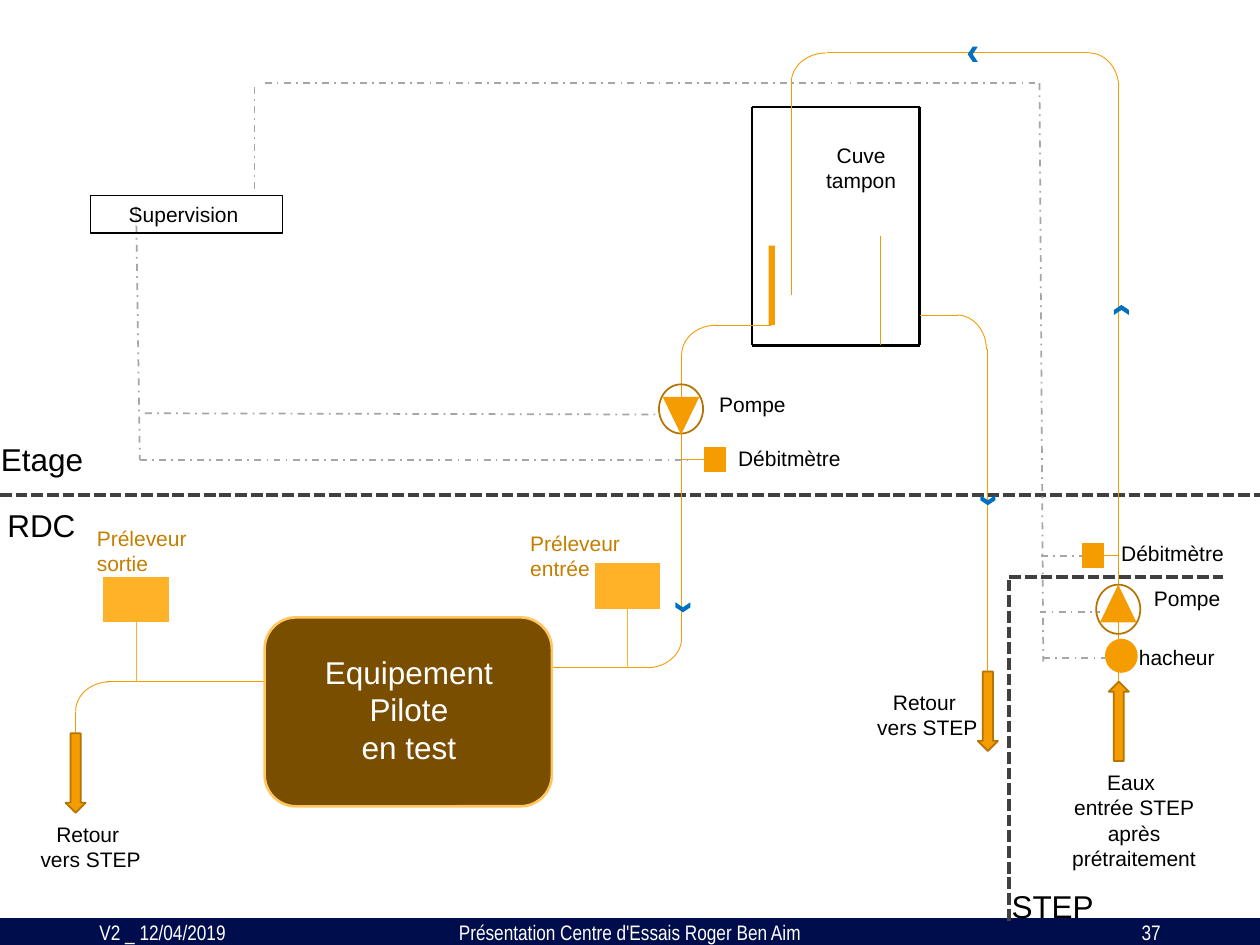
from lxml import etree
from pptx import Presentation
from pptx.dml.color import RGBColor
from pptx.enum.dml import MSO_LINE
from pptx.enum.shapes import MSO_CONNECTOR, MSO_SHAPE
from pptx.enum.text import MSO_ANCHOR, PP_ALIGN
from pptx.oxml.ns import qn
from pptx.util import Inches, Pt

LEFT, CENTER, RIGHT = PP_ALIGN.LEFT, PP_ALIGN.CENTER, PP_ALIGN.RIGHT
TOP, MIDDLE = MSO_ANCHOR.TOP, MSO_ANCHOR.MIDDLE
DASH, DASH_DOT = MSO_LINE.SQUARE_DOT, MSO_LINE.DASH_DOT
STRAIGHT = MSO_CONNECTOR.STRAIGHT
RECTANGLE, ROUNDED = MSO_SHAPE.RECTANGLE, MSO_SHAPE.ROUNDED_RECTANGLE
PROCESS, RING = MSO_SHAPE.FLOWCHART_PROCESS, MSO_SHAPE.FLOWCHART_CONNECTOR
ARC, ARROW, CHEVRON = MSO_SHAPE.ARC, MSO_SHAPE.UP_ARROW, MSO_SHAPE.CHEVRON
TRIANGLE, OVAL = MSO_SHAPE.ISOSCELES_TRIANGLE, MSO_SHAPE.OVAL

ORANGE, DARK_ORANGE, LIGHT_ORANGE = "F59C00", "B57300", "FFB227"
OCHRE, BROWN, PEACH = "C47E00", "7A4E00", "FFC560"
NAVY, BLUE, GREY, DARK_GREY = "000D4C", "0070C0", "A6A6A6", "404040"
BLACK, WHITE = "000000", "FFFFFF"

presentation = Presentation()
presentation.slide_width, presentation.slide_height = Inches(10), Inches(7.5)
slide = presentation.slides.add_slide(presentation.slide_layouts[6])


def add_line(x1, y1, x2, y2, color=ORANGE, width=0.5, dash=None):
    connector = slide.shapes.add_connector(
        STRAIGHT, Inches(x1), Inches(y1), Inches(x2), Inches(y2))
    connector.line.color.rgb = RGBColor.from_string(color)
    connector.line.width = Pt(width)
    if dash:
        connector.line.dash_style = dash
    etree.SubElement(connector._element.spPr, qn("a:effectLst"))
    return connector


def add_figure(kind, left, top, width, height, fill=None, line=None,
               line_width=1, rotation=0):
    shape = slide.shapes.add_shape(
        kind, Inches(left), Inches(top), Inches(width), Inches(height))
    shape.shadow.inherit = False
    shape.rotation = rotation
    if fill:
        shape.fill.solid()
        shape.fill.fore_color.rgb = RGBColor.from_string(fill)
    else:
        shape.fill.background()
    if line:
        shape.line.color.rgb = RGBColor.from_string(line)
        shape.line.width = Pt(line_width)
    else:
        shape.line.fill.background()
    return shape


add_figure(RECTANGLE, 0, 7.29, 10, 0.21, NAVY, NAVY)

add_line(0, 3.93, 10, 3.93, DARK_GREY, 2.25, DASH)

tank_corners = [(5.97, 0.85), (7.3, 0.85), (7.3, 2.74), (5.97, 2.74)]
for start, end in zip(tank_corners, tank_corners[1:] + tank_corners[:1]):
    add_line(*start, *end, BLACK, 1.5)

pipes = [
    (8.88, 6.04, 8.88, 0.69), (6.56, 0.42, 8.64, 0.42),
    (6.28, 0.65, 6.28, 2.34), (6.99, 1.87, 6.99, 2.74),
    (7.3, 2.5, 7.6, 2.5), (7.84, 2.77, 7.84, 5.81),
    (6.12, 2.11, 6.12, 2.58), (6.12, 2.58, 5.65, 2.58),
    (5.41, 2.81, 5.41, 5.07), (4.38, 5.3, 5.18, 5.3),
    (2.1, 5.41, 0.85, 5.41), (0.6, 5.65, 0.6, 6.44),
]
for pipe in pipes:
    add_line(*pipe)

bends = [(8.41, 0.42, 0), (6.32, 0.38, 270), (7.36, 2.5, 0),
         (5.45, 2.54, 270), (4.9, 4.79, 90), (0.64, 5.37, 270)]
for left, top, rotation in bends:
    add_figure(ARC, left, top, 0.47, 0.55, line=ORANGE, line_width=0.5,
               rotation=rotation)

for left, top, rotation in [(8.8, 5.41, 0), (7.76, 5.33, 180), (0.52, 5.82, 180)]:
    add_figure(ARROW, left, top, 0.16, 0.63, ORANGE, DARK_ORANGE, 1, rotation)

add_figure(ROUNDED, 2.1, 4.9, 2.28, 1.5, BROWN, PEACH, 1.5)

flow_marks = [(8.86, 2.4, 270), (7.68, 0.37, 180), (7.8, 3.91, 90), (5.38, 4.76, 90)]
for left, top, rotation in flow_marks:
    add_figure(CHEVRON, left, top, 0.08, 0.12, BLUE, rotation=rotation)

add_figure(RECTANGLE, 6.1, 1.95, 0.05, 0.63, ORANGE)

for left, top, pipe_y in [(4.72, 4.47, 5.3), (0.82, 4.58, 5.41)]:
    sampler = add_figure(PROCESS, left, top, 0.52, 0.36, LIGHT_ORANGE)
    middle = left + 0.26
    add_line(middle, top + 0.36, middle, pipe_y, LIGHT_ORANGE).begin_connect(sampler, 2)

for left, top, triangle_top, rotation in [(5.23, 3.05, 3.15, 180), (8.7, 4.64, 4.64, 0)]:
    add_figure(RING, left, top, 0.35, 0.39, line=DARK_ORANGE, rotation=rotation)
    add_figure(TRIANGLE, left + 0.03, triangle_top, 0.29, 0.3, ORANGE, rotation=rotation)

add_figure(OVAL, 8.77, 5.07, 0.26, 0.27, ORANGE)

floor_meter = add_figure(PROCESS, 5.59, 3.55, 0.17, 0.2, ORANGE)
add_line(5.41, 3.65, 5.59, 3.65).end_connect(floor_meter, 1)
inlet_meter = add_figure(PROCESS, 8.59, 4.31, 0.17, 0.2, ORANGE)
add_line(8.76, 4.41, 8.88, 4.41).begin_connect(inlet_meter, 3)
add_line(8.26, 4.41, 8.59, 4.41, GREY, 1, DASH_DOT).end_connect(inlet_meter, 1)

signals = [
    (8.25, 4.86, 8.73, 4.86), (1.11, 3.65, 5.46, 3.65),
    (1.15, 3.28, 5.2, 3.29), (1.08, 1.64, 1.11, 3.65),
    (8.28, 5.22, 8.77, 5.22), (8.25, 0.66, 8.28, 5.25),
    (2.1, 0.66, 8.25, 0.66), (2.02, 0.69, 2.02, 1.55),
]
for signal in signals:
    add_line(*signal, GREY, 1, DASH_DOT)

add_line(8.01, 4.58, 9.71, 4.58, DARK_GREY, 2.25, DASH)
add_line(8.01, 4.6, 8.01, 7.31, DARK_GREY, 2.25, DASH)

add_figure(RECTANGLE, 0.72, 1.55, 1.52, 0.3, line=BLACK, line_width=0.75)

floor_style = (LEFT, 18, BLACK, "Arial", TOP)
label_style = (LEFT, 12, BLACK, "Arial", TOP)
centered_style = (CENTER, 12, BLACK, "Arial", TOP)
sampler_style = (LEFT, 12, OCHRE, "Arial", TOP)
pilot_style = (CENTER, 18, WHITE, "Arial", TOP)
footer_styles = [(align, 12, WHITE, "Arial Narrow", MIDDLE)
                 for align in (LEFT, CENTER, RIGHT)]
labels = [
    (-0.09, 3.44, 0.94, 0.4, ["Etage"], floor_style),
    (-0.04, 3.97, 1.5, 0.4, ["RDC"], floor_style),
    (7.93, 6.99, 1.5, 0.4, ["STEP"], floor_style),
    (8.34, 6.06, 1.32, 0.91, ["Eaux ", "entrée STEP après prétraitement"], centered_style),
    (6.69, 5.42, 1.34, 0.5, ["Retour ", "vers STEP"], centered_style),
    (0.05, 6.47, 1.34, 0.5, ["Retour ", "vers STEP"], centered_style),
    (0.72, 1.55, 1.52, 0.3, ["Supervision "], centered_style),
    (6.4, 1.08, 0.87, 0.5, ["Cuve tampon"], centered_style),
    (0.67, 4.12, 1.35, 0.3, ["Préleveur sortie"], sampler_style),
    (4.11, 4.16, 1.35, 0.3, ["Préleveur entrée"], sampler_style),
    (5.61, 3.06, 0.94, 0.3, ["Pompe"], label_style),
    (5.76, 3.49, 1.05, 0.3, ["Débitmètre"], label_style),
    (9.06, 4.6, 0.94, 0.3, ["Pompe"], label_style),
    (8.94, 5.07, 0.88, 0.3, ["hacheur"], label_style),
    (8.8, 4.24, 1.05, 0.3, ["Débitmètre"], label_style),
    (2.47, 5.13, 1.55, 1.01, ["Equipement Pilote", "en test"], pilot_style),
    (0.69, 7.3, 2.25, 0.2, ["V2 _ 12/04/2019"], footer_styles[0]),
    (3.31, 7.3, 3.38, 0.2, ["Présentation Centre d'Essais Roger Ben Aim"], footer_styles[1]),
    (7.06, 7.3, 2.25, 0.2, ["37"], footer_styles[2]),
]
for left, top, width, height, lines, style in labels:
    align, size, color, font_name, anchor = style
    text_box = slide.shapes.add_textbox(
        Inches(left), Inches(top), Inches(width), Inches(height))
    text_frame = text_box.text_frame
    text_frame.word_wrap = True
    text_frame.vertical_anchor = anchor
    for index, line in enumerate(lines):
        paragraph = text_frame.add_paragraph() if index else text_frame.paragraphs[0]
        paragraph.alignment = align
        run = paragraph.add_run()
        run.text = line
        run.font.name = font_name
        run.font.size = Pt(size)
        run.font.color.rgb = RGBColor.from_string(color)

presentation.save("out.pptx")
